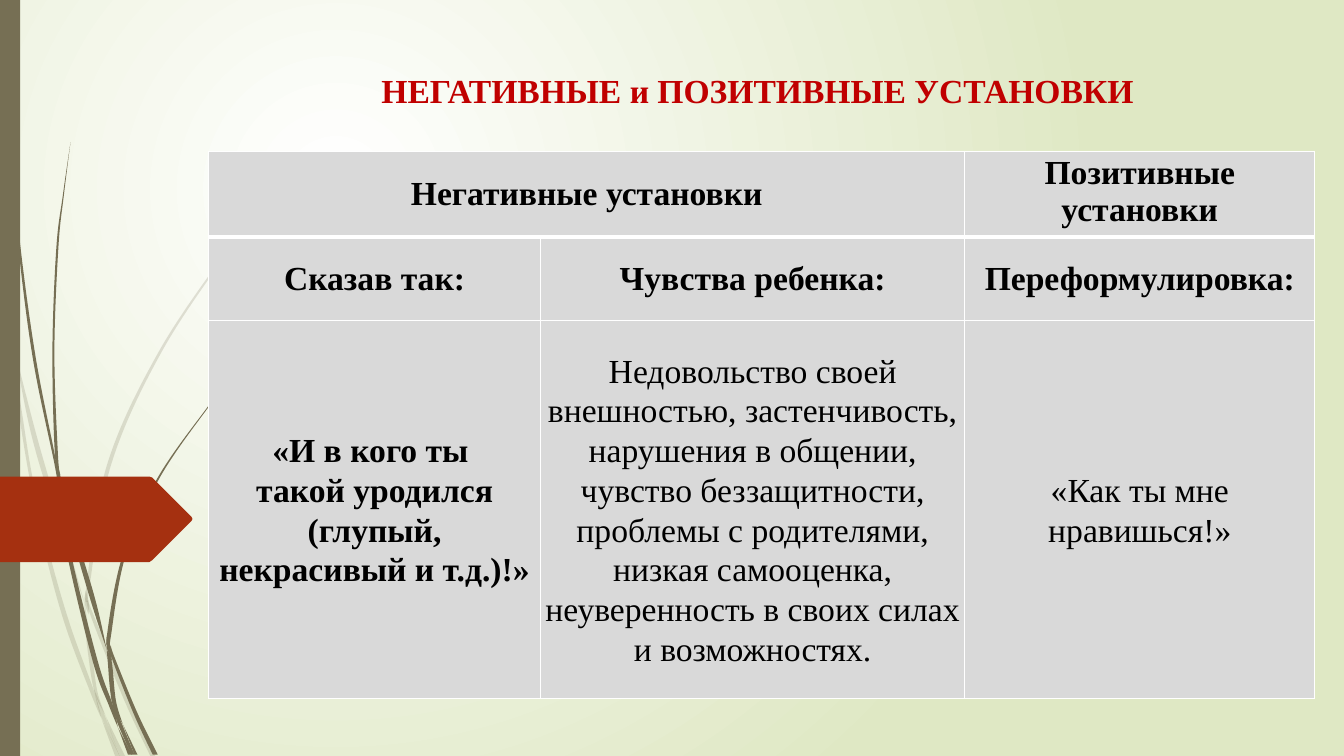
import pptx
import pptx.dml.color
import pptx.enum.shapes
import pptx.enum.text
import pptx.oxml
import pptx.oxml.ns
import pptx.util
from dataclasses import dataclass

Inches = pptx.util.Inches
qn = pptx.oxml.ns.qn

TITLE = "НЕГАТИВНЫЕ и ПОЗИТИВНЫЕ УСТАНОВКИ"
TABLE_ROWS = [
    [["Негативные установки"], None, ["Позитивные установки"]],
    [["Сказав так:"], ["Чувства ребенка:"], ["Переформулировка:"]],
    [
        ["«И в кого ты ", "такой уродился", "(глупый, некрасивый и т.д.)!»"],
        ["Недовольство своей внешностью, застенчивость, нарушения в общении, "
         "чувство беззащитности, проблемы с родителями, низкая самооценка, "
         "неуверенность в своих силах и возможностях."],
        ["«Как ты мне нравишься!»"],
    ],
]
COLUMN_WIDTHS = [3.29, 4.21, 3.47]
ROW_HEIGHTS = [0.85, 0.83, 3.75]

# Each blade of grass: (centre x, y, width) from tip to root, in inches
PALE_BLADES = [
    [(0, 2.82, 0), (0.05, 3.12, 0.03), (0.11, 3.5, 0)],
    [(0.14, 3.45, 0), (0.34, 4.33, 0.05), (0.6, 5.21, 0.04), (0.84, 5.99, 0)],
    [(0.88, 5.96, 0), (0.9, 6.07, 0.03), (1.25, 6.93, 0.05), (1.52, 7.51, 0.05)],
    [(1.05, 7.11, 0), (1.13, 7.31, 0.03), (1.22, 7.51, 0.05)],
    [(0.11, 3.5, 0), (0.18, 3.95, 0.03), (0.3, 4.7, 0.03), (0.46, 5.45, 0.04),
     (0.67, 6.2, 0.05), (0.92, 6.88, 0.04), (1.01, 7.14, 0)],
    [(0.84, 5.99, 0), (0.86, 6.22, 0.03), (0.89, 6.46, 0.04), (0.95, 6.86, 0.03),
     (1.05, 7.11, 0)],
    [(3.12, 1.53, 0), (2.68, 1.98, 0.02), (2.29, 2.45, 0.02), (1.59, 3.49, 0.03),
     (1.08, 4.62, 0.04), (0.87, 5.84, 0.03), (0.88, 5.96, 0)],
    [(1.01, 7.14, 0), (1.17, 7.51, 0.05)],
    [(0.85, 5.86, 0), (0.86, 5.98, 0.04), (0.88, 6.1, 0)],
    [(0.93, 6.83, 0), (1.02, 7.1, 0.04), (1.19, 7.51, 0)],
]
DARK_BLADES = [
    [(0.04, 0, 0.01), (0.05, 0.48, 0.01), (0.08, 1.1, 0.01), (0.18, 2.33, 0.02),
     (0.34, 3.55, 0.03), (0.55, 4.6, 0.02), (0.57, 4.81, 0)],
    [(0.6, 4.72, 0), (0.65, 5.02, 0.03), (0.91, 5.91, 0.05), (1.06, 6.45, 0)],
    [(1.1, 6.41, 0), (1.12, 6.52, 0.03), (1.34, 7.07, 0.04), (1.54, 7.49, 0.05)],
    [(0.57, 4.77, 0), (0.62, 5.05, 0.04), (0.7, 5.57, 0.04), (0.95, 6.58, 0.05),
     (1.1, 7, 0.04), (1.17, 7.22, 0)],
    [(0.7, 1.41, 0), (0.63, 1.93, 0.01), (0.57, 2.45, 0.02), (0.53, 3.49, 0.02),
     (0.56, 4.51, 0.03), (0.6, 4.72, 0)],
    [(1.22, 7.19, 0), (1.35, 7.49, 0.03)],
    [(0.55, 4.49, 0), (0.59, 4.77, 0.03), (0.64, 5.05, 0)],
    [(2.6, 3.44, 0), (2.31, 3.74, 0.01), (2.05, 4.06, 0.01), (1.57, 4.75, 0.02),
     (1.23, 5.52, 0.03), (1.08, 6.32, 0.04), (1.1, 6.41, 0)],
    [(1.17, 7.22, 0), (1.29, 7.49, 0.04)],
    [(1.06, 6.45, 0), (1.09, 6.57, 0.04), (1.13, 6.95, 0.04), (1.22, 7.19, 0)],
    [(1.06, 6.31, 0), (1.08, 6.43, 0.04), (1.11, 6.56, 0)],
    [(1.1, 6.91, 0), (1.18, 7.16, 0.04), (1.32, 7.49, 0.03)],
]
ARROW_OUTLINE = [
    (0, 4.73), (1.48, 4.73), (1.51, 4.74), (1.9, 5.13), (1.91, 5.15),
    (1.9, 5.17), (1.51, 5.56), (1.48, 5.58), (0, 5.58),
]


@dataclass(frozen=True)
class Theme:
    font: str = "Times New Roman"
    text_size: int = 24
    title: str = "C00000"
    text: str = "000000"
    cell: str = "D9D9D9"
    border: str = "FFFFFF"
    glow: str = "FFFFFF"
    backdrop: str = "DFE8C4"
    grass: str = "766F54"
    arrow: str = "A53010"


THEME = Theme()


def rgb(code):
    return pptx.dml.color.RGBColor.from_string(code)


def apply(target, values):
    for name, value in values.items():
        setattr(target, name, value)


def write(frame, lines, color, bold, line_spacing=1.0):
    for index, line in enumerate(lines):
        paragraph = frame.paragraphs[0] if index == 0 else frame.add_paragraph()
        apply(paragraph, {"alignment": pptx.enum.text.PP_ALIGN.CENTER,
                          "line_spacing": line_spacing})
        run = paragraph.add_run()
        run.text = line
        apply(run.font, {"name": THEME.font, "size": pptx.util.Pt(THEME.text_size), "bold": bold})
        run.font.color.rgb = rgb(color)


def paint(shape, color, opacity=100):
    shape.shadow.inherit = False
    shape.fill.solid()
    shape.fill.fore_color.rgb = rgb(color)
    shape.line.fill.background()
    if opacity < 100:
        tint = shape.fill._xPr.find(".//" + qn("a:srgbClr"))
        tint.append(pptx.oxml.parse_xml(
            f'<a:alpha {pptx.oxml.ns.nsdecls("a")} val="{opacity * 1000}"/>'))


def add_outline(slide, points):
    mils = [(round(x * 1000), round(y * 1000)) for x, y in points]
    builder = slide.shapes.build_freeform(*mils[0], scale=Inches(0.001))
    builder.add_line_segments(mils[1:], close=True)
    return builder.convert_to_shape()


def bend(shape, edge_length):
    """Turn the two edges of a blade into smooth Bézier curves, leaving its ends straight."""
    points = [(int(pt.get("x")), int(pt.get("y"))) for pt in shape._element.iter(qn("a:pt"))]
    for index, line in enumerate(list(shape._element.iter(qn("a:lnTo"))), start=1):
        if index == edge_length:
            continue
        first = 0 if index < edge_length else edge_length
        last = first + edge_length - 1
        before, start = points[max(index - 2, first)], points[index - 1]
        end, after = points[index], points[min(index + 1, last)]
        controls = (
            [s + (e - b) / 6 for b, s, e in zip(before, start, end)],
            [e - (a - s) / 6 for s, e, a in zip(start, end, after)],
            end)
        stops = "".join(f'<a:pt x="{round(x)}" y="{round(y)}"/>' for x, y in controls)
        line.getparent().replace(line, pptx.oxml.parse_xml(
            f'<a:cubicBezTo {pptx.oxml.ns.nsdecls("a")}>{stops}</a:cubicBezTo>'))


def add_blade(slide, knots, opacity):
    left_edge = [(x - width / 2, y) for x, y, width in knots]
    right_edge = [(x + width / 2, y) for x, y, width in knots]
    blade = add_outline(slide, left_edge + right_edge[::-1])
    bend(blade, len(knots))
    paint(blade, THEME.grass, opacity)


def set_background(slide):
    fill = slide.background.fill
    fill.gradient()
    for stop, color, position in zip(fill.gradient_stops, (THEME.glow, THEME.backdrop), (0, 1)):
        stop.color.rgb = rgb(color)
        stop.position = position
    gradient = fill._xPr.find(qn("a:gradFill"))
    gradient.replace(gradient.find(qn("a:lin")), pptx.oxml.parse_xml(
        f'<a:path {pptx.oxml.ns.nsdecls("a")} path="circle">'
        '<a:fillToRect l="50000" t="50000" r="100000" b="100000"/></a:path>'))


def set_borders(cell, bottom_width):
    properties = cell._tc.get_or_add_tcPr()
    for index, (side, width) in enumerate(zip("LRTB", (1, 1, 1, bottom_width))):
        properties.insert(index, pptx.oxml.parse_xml(
            f'<a:ln{side} {pptx.oxml.ns.nsdecls("a")} w="{pptx.util.Pt(width)}"><a:solidFill>'
            f'<a:srgbClr val="{THEME.border}"/></a:solidFill></a:ln{side}>'))


def add_attitudes(slide):
    attitudes = slide.shapes.add_table(
        len(ROW_HEIGHTS), len(COLUMN_WIDTHS), Inches(2.07), Inches(1.5),
        Inches(sum(COLUMN_WIDTHS)), Inches(sum(ROW_HEIGHTS))).table
    apply(attitudes, {"first_row": False, "horz_banding": False})
    for column, width in zip(attitudes.columns, COLUMN_WIDTHS):
        column.width = Inches(width)
    for row, height in zip(attitudes.rows, ROW_HEIGHTS):
        row.height = Inches(height)
    attitudes.cell(0, 0).merge(attitudes.cell(0, 1))
    for r, row in enumerate(TABLE_ROWS):
        is_body = r == 2
        margin = Inches(0.03 if is_body else 0.01)
        for c, lines in enumerate(row):
            cell = attitudes.cell(r, c)
            apply(cell, {f"margin_{side}": margin for side in ("left", "right", "top", "bottom")})
            cell.vertical_anchor = pptx.enum.text.MSO_ANCHOR.MIDDLE
            cell.fill.solid()
            cell.fill.fore_color.rgb = rgb(THEME.cell)
            set_borders(cell, 3 if r == 0 else 1)
            if lines:
                write(cell.text_frame, lines, THEME.text, not is_body or c == 0,
                      1.07 if is_body else 1.0)
    attitudes.cell(0, 2).margin_bottom = Inches(0.05)


def main():
    deck = pptx.Presentation()
    apply(deck, {"slide_width": Inches(13.33), "slide_height": Inches(7.5)})
    slide = deck.slides.add_slide(deck.slide_layouts[5])
    set_background(slide)
    for blades, opacity in ((PALE_BLADES, 20), (DARK_BLADES, 100)):
        for knots in blades:
            add_blade(slide, knots, opacity)
    edge = slide.shapes.add_shape(
        pptx.enum.shapes.MSO_SHAPE.RECTANGLE, 0, 0, Inches(0.2), Inches(7.5))
    paint(edge, THEME.grass)
    paint(add_outline(slide, ARROW_OUTLINE), THEME.arrow)
    add_attitudes(slide)
    title = slide.shapes.title
    apply(title, {"left": Inches(1.88), "top": Inches(0.64),
                  "width": Inches(11.27), "height": Inches(0.5)})
    apply(title.text_frame, {"word_wrap": True,
                             "vertical_anchor": pptx.enum.text.MSO_ANCHOR.MIDDLE})
    write(title.text_frame, [TITLE], THEME.title, True)
    deck.save("out.pptx")


if __name__ == "__main__":
    main()
